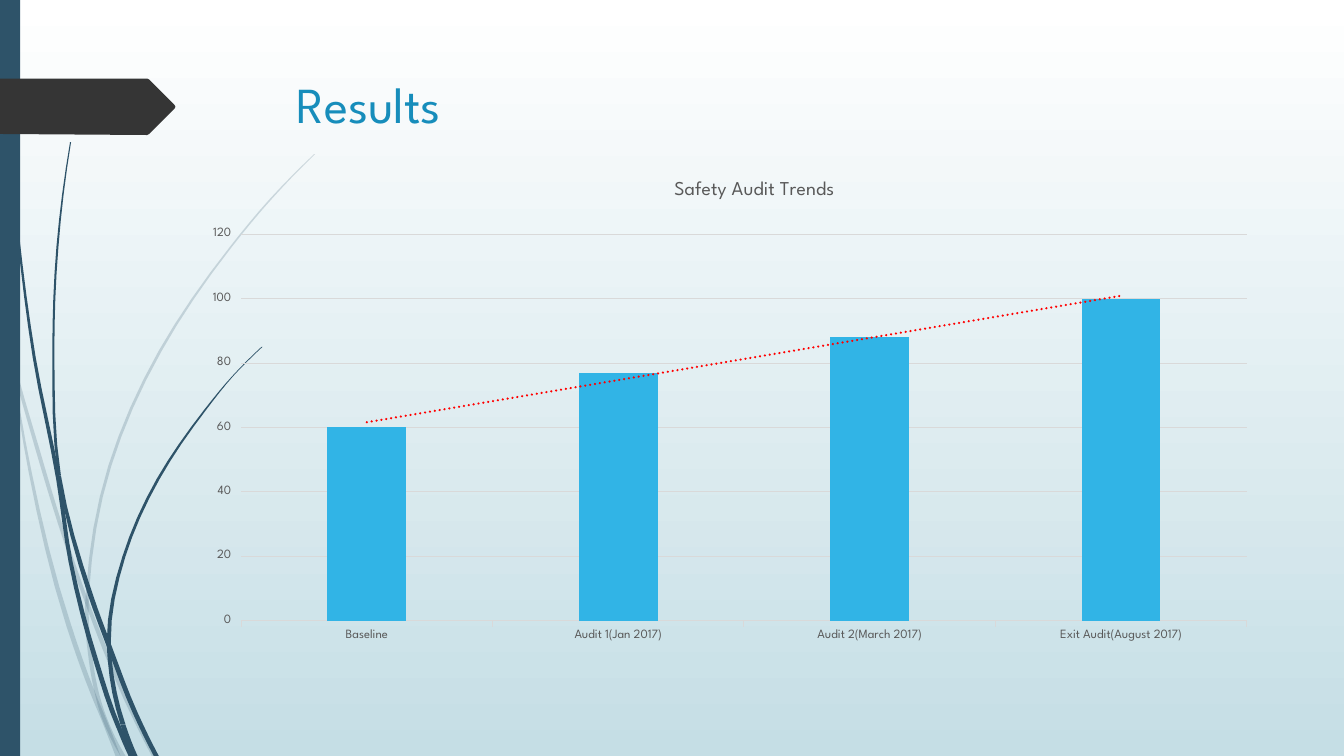
from dataclasses import dataclass

from lxml import etree
from pptx import Presentation
from pptx.chart.data import CategoryChartData
from pptx.dml.color import RGBColor
from pptx.enum import chart as ch, shapes as sh, text as tx
from pptx.oxml import parse_xml
from pptx.oxml.ns import nsdecls, qn
from pptx.util import Inches, Pt


@dataclass(frozen=True)
class Theme:
    """Colours, font and type sizes of the slide."""
    font: str = "League Spartan"
    top: str = "FFFFFF"
    base: str = "C5DEE5"
    navy: str = "2E5369"
    tag: str = "353535"
    head: str = "178DBB"
    bar: str = "31B4E6"
    trend: str = "FF0000"
    label: str = "595959"
    grid: str = "D9D9D9"
    big: int = 36
    mid: int = 14
    small: int = 9


T = Theme()
PALE = [
    ([(0, 2.9, .08), (.11, 3.5, .03), (.37, 4.45, .04), (.6, 5.21, .04),
      (.86, 5.97, .04), (1.25, 6.93, .05), (1.53, 7.5, .05)], (1, 4)),
    ([(.11, 3.5, .01), (.3, 4.69, .03), (.68, 6.2, .05), (.93, 6.9, .05),
      (1.03, 7.14, .05), (1.17, 7.5, .05)], (4,)),
    ([(3.12, 1.53, .01), (2.69, 1.97, .02), (2.29, 2.45, .02),
      (1.59, 3.48, .03), (1.09, 4.62, .03), (.87, 5.86, .03),
      (.86, 6.1, .04), (.89, 6.46, .04), (.95, 6.83, .04),
      (1.03, 7.11, .05), (1.22, 7.5, .05)], (5, 6, 9)),
]
DARK = [
    ([(.04, 0, .01), (.08, 1.1, .01), (.18, 2.33, .02), (.34, 3.55, .03),
      (.58, 4.77, .04), (.7, 5.57, .04), (.96, 6.58, .05),
      (1.18, 7.22, .05), (1.31, 7.5, .07)], (4, 7)),
    ([(.7, 1.41, .01), (.57, 2.45, .02), (.53, 3.49, .02),
      (.59, 4.72, .03), (.9, 5.91, .05), (1.09, 6.43, .05),
      (1.34, 7.07, .05), (1.55, 7.5, .05)], (3, 5)),
    ([(2.6, 3.44, .01), (2.31, 3.73, .01), (2.04, 4.06, .02),
      (1.57, 4.75, .03), (1.23, 5.52, .03), (1.08, 6.36, .04),
      (1.09, 6.56, .04), (1.22, 7.19, .05), (1.34, 7.5, .05)], (5, 6, 7)),
]
TAG = [(0, .78), (1.46, .78), (1.48, .79), (1.73, 1.04), (1.74, 1.06),
       (1.73, 1.08), (1.48, 1.33), (1.46, 1.34), (0, 1.33)]
STEPS = 4


def rgb(hue):
    """Return a colour from its hex form."""
    return RGBColor.from_string(hue)


def style(font, size, hue):
    """Set the face, size and colour of a font."""
    font.name, font.size, font.bold = T.font, Pt(size), False
    font.color.rgb = rgb(hue)


def slopes(ys, vals):
    """Return the slope of a smooth curve at each knot."""
    gaps = [b - a for a, b in zip(ys, ys[1:])]
    rise = [(b - a) / g for a, b, g in zip(vals, vals[1:], gaps)]
    mids = [(p * h + q * g) / (g + h)
            for p, q, g, h in zip(rise, rise[1:], gaps, gaps[1:])]
    return [2 * rise[0] - mids[0], *mids, 2 * rise[-1] - mids[-1]]


def curve(knots):
    """Return points on a smooth curve down through the knots."""
    xs, ys, ws = zip(*knots)
    tilt = slopes(ys, xs)
    dots = []
    for i in range(len(knots) - 1):
        gap = ys[i + 1] - ys[i]
        for j in range(STEPS):
            t = j / STEPS
            ease = t * t * (3 - 2 * t)
            x = (xs[i] + (xs[i + 1] - xs[i]) * ease
                 + gap * t * (1 - t) * (tilt[i] * (1 - t) - tilt[i + 1] * t))
            dots.append((x, ys[i] + gap * t, ws[i] + (ws[i + 1] - ws[i]) * t))
    return dots + [knots[-1]]


def fill(shape, hue):
    """Give a shape a flat fill without line or shadow."""
    shape.shadow.inherit = False
    shape.line.fill.background()
    shape.fill.solid()
    shape.fill.fore_color.rgb = rgb(hue)


def patch(slide, dots, hue, alpha=100):
    """Draw a filled outline."""
    pts = [(Inches(x), Inches(y)) for x, y in dots]
    form = slide.shapes.build_freeform(*pts[0])
    form.add_line_segments(pts[1:], close=True)
    shape = form.convert_to_shape()
    fill(shape, hue)
    if alpha < 100:
        tint = shape.fill._xPr.find(".//" + qn("a:srgbClr"))
        etree.SubElement(tint, qn("a:alpha"), val=str(alpha * 1000))


def strand(slide, knots, cuts, alpha):
    """Draw a tapered blade of grass in joined parts."""
    dots = curve(knots)
    ends = [0, *cuts, len(knots) - 1]
    for a, b in zip(ends, ends[1:]):
        part = dots[a * STEPS:b * STEPS + 1]
        left = [(max(0, x - w / 2), y) for x, y, w in part]
        right = [(x + w / 2, y) for x, y, w in part]
        patch(slide, left + right[::-1], T.navy, alpha)


def paint(slide):
    """Fill the background from top to bottom."""
    back = slide.background.fill
    back.gradient()
    back.gradient_angle = 270
    for stop, hue in zip(back.gradient_stops, (T.top, T.base)):
        stop.color.rgb = rgb(hue)


def title(slide, words):
    """Place and format the slide title."""
    box = slide.shapes.title
    box.left, box.top = Inches(2.84), Inches(.68)
    box.width, box.height = Inches(9.75), Inches(1.4)
    frame = box.text_frame
    frame.vertical_anchor = tx.MSO_ANCHOR.TOP
    para = frame.paragraphs[0]
    para.alignment = tx.PP_ALIGN.LEFT
    run = para.add_run()
    run.text = words
    style(run.font, T.big, T.head)


def trend(series):
    """Add a dotted linear trend line to a series."""
    node = parse_xml(
        f'<c:trendline {nsdecls("c", "a")}><c:spPr><a:ln w="{Pt(1.75)}" cap="rnd">'
        f'<a:solidFill><a:srgbClr val="{T.trend}"/></a:solidFill>'
        '<a:prstDash val="sysDot"/></a:ln></c:spPr>'
        '<c:trendlineType val="linear"/><c:dispRSqr val="0"/>'
        '<c:dispEq val="0"/></c:trendline>')
    series._element.find(qn("c:cat")).addprevious(node)


def place(node, **spots):
    """Fix the layout of a chart part."""
    for old in node.findall(qn("c:layout")):
        node.remove(old)
    tags = "".join(f'<c:{key} val="{val}"/>' for key, val in spots.items())
    layout = parse_xml(f'<c:layout {nsdecls("c")}><c:manualLayout>{tags}'
                       '</c:manualLayout></c:layout>')
    node.insert(1 if node.find(qn("c:tx")) is not None else 0, layout)


def rule(line):
    """Format an axis or grid line."""
    line.width = Pt(.75)
    line.color.rgb = rgb(T.grid)


def bars(slide):
    """Add the audit chart."""
    data = CategoryChartData()
    data.categories = ["Baseline", "Audit 1(Jan 2017)",
                       "Audit 2(March 2017)", "Exit Audit(August 2017)"]
    data.add_series("Series 1", (60, 77, 88, 100))
    chart = slide.shapes.add_chart(
        ch.XL_CHART_TYPE.COLUMN_CLUSTERED, Inches(1.9), Inches(1.75),
        Inches(10.68), Inches(4.71), data).chart
    style(chart.font, T.small, T.label)
    chart.has_legend = False
    chart.has_title = True
    run = chart.chart_title.text_frame.paragraphs[0].add_run()
    run.text = "Safety Audit Trends"
    style(run.font, T.mid, T.label)
    place(chart.chart_title._element, xMode="edge", yMode="edge", x=.445, y=0)
    plot = chart.plots[0]
    place(plot._element.getparent(), layoutTarget="inner", xMode="edge",
          yMode="edge", x=.046, y=.122, w=.934, h=.814)
    plot.gap_width, plot.overlap, plot.vary_by_categories = 219, -27, False
    series = plot.series[0]
    series.format.fill.solid()
    series.format.fill.fore_color.rgb = rgb(T.bar)
    trend(series)
    cat, val = chart.category_axis, chart.value_axis
    for axis in (cat, val):
        style(axis.tick_labels.font, T.small, T.label)
        axis.major_tick_mark = ch.XL_TICK_MARK.OUTSIDE
    rule(cat.format.line)
    val.format.line.fill.background()
    val.minimum_scale, val.maximum_scale, val.major_unit = 0, 120, 20
    val.has_major_gridlines = True
    rule(val.major_gridlines.format.line)


def main():
    """Build and save the slide."""
    deck = Presentation()
    deck.slide_width, deck.slide_height = Inches(13.33), Inches(7.5)
    slide = deck.slides.add_slide(deck.slide_layouts[5])
    paint(slide)
    for group, alpha in ((PALE, 20), (DARK, 100)):
        for knots, cuts in group:
            strand(slide, knots, cuts, alpha)
    fill(slide.shapes.add_shape(sh.MSO_SHAPE.RECTANGLE, 0, 0, Inches(.2),
                                Inches(7.5)), T.navy)
    patch(slide, TAG, T.tag)
    title(slide, "Results")
    bars(slide)
    deck.save("out.pptx")


if __name__ == "__main__":
    main()
